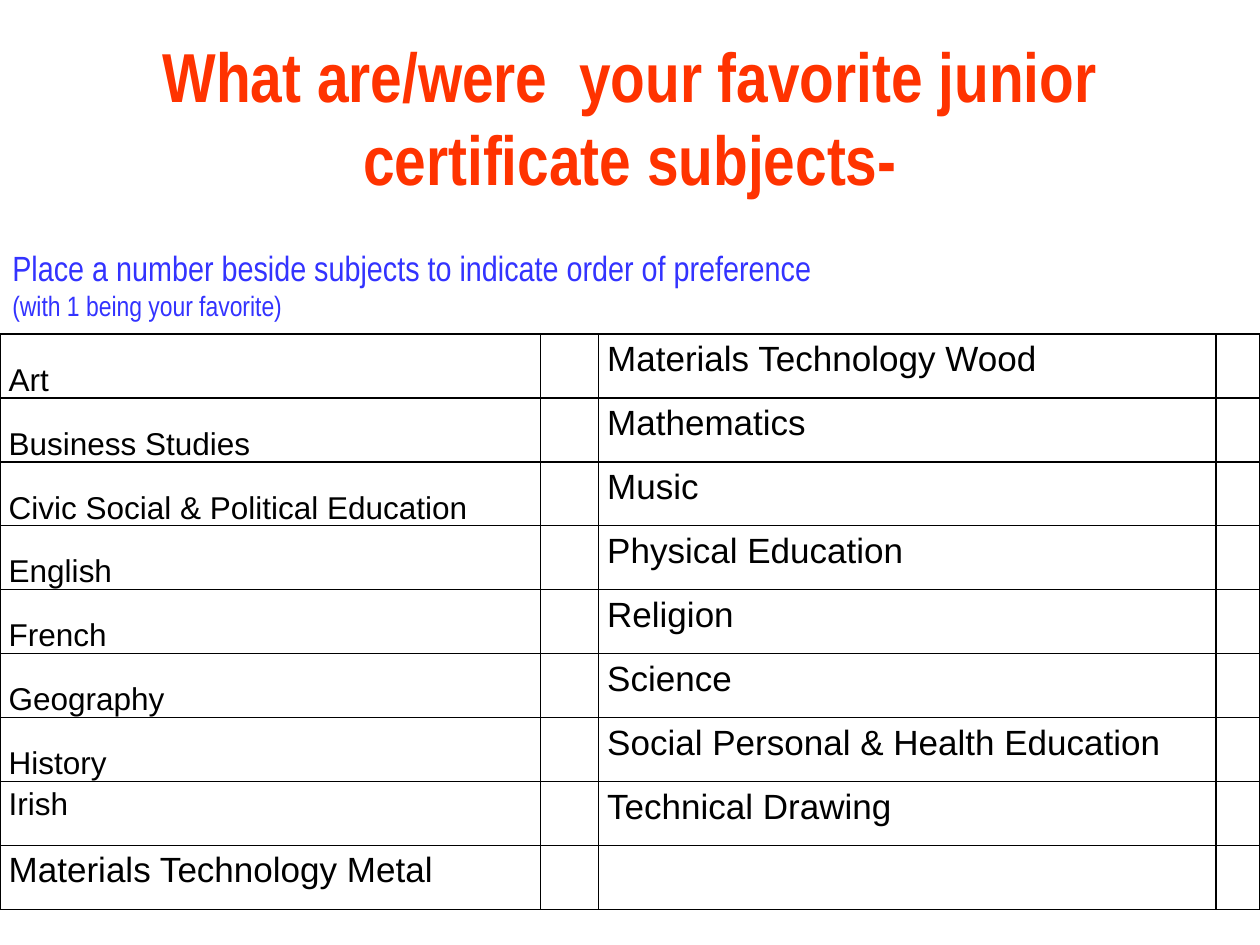
from typing import NamedTuple, Optional

from lxml.etree import SubElement
from pptx import Presentation
from pptx.dml.color import RGBColor
from pptx.enum.text import MSO_ANCHOR, PP_ALIGN
from pptx.oxml.ns import qn
from pptx.util import Pt

RED = RGBColor(0xFF, 0x33, 0x00)
BLUE = RGBColor(0x33, 0x33, 0xFF)
BLACK = RGBColor(0x00, 0x00, 0x00)

COLUMN_WIDTHS = (308.88, 33.12, 352.8, 25.2)
ROW_HEIGHT = 36.56


class Subject(NamedTuple):
    name: str
    size: float = 20
    anchor: MSO_ANCHOR = MSO_ANCHOR.TOP


LEFT_SUBJECTS = [
    Subject(name, 18, MSO_ANCHOR.BOTTOM)
    for name in (
        "Art",
        "Business Studies",
        "Civic Social & Political Education",
        "English",
        "French",
        "Geography",
        "History",
    )
] + [Subject("Irish", 18), Subject("Materials Technology Metal")]

RIGHT_SUBJECTS = [
    Subject(name)
    for name in (
        "Materials Technology Wood",
        "Mathematics",
        "Music",
        "Physical Education",
        "Religion",
        "Science",
        "Social Personal & Health Education",
        "Technical Drawing",
    )
]


def write(p, text: str, *, size: float, color: RGBColor, font: str = "Arial",
          bold: bool = False, align: PP_ALIGN = PP_ALIGN.LEFT,
          spacing: Optional[float] = None, after: float = 0) -> None:
    p.alignment = align
    p.space_before = Pt(0)
    p.space_after = Pt(after)
    if spacing:
        p.line_spacing = spacing
    r = p.add_run()
    r.text = text
    r.font.name = font
    r.font.size = Pt(size)
    r.font.bold = bold
    r.font.color.rgb = color


def add_borders(cell) -> None:
    tc_pr = cell._tc.get_or_add_tcPr()
    for i, side in enumerate(("lnL", "lnR", "lnT", "lnB")):
        ln = SubElement(tc_pr, qn(f"a:{side}"), w=str(Pt(1)))
        fill = SubElement(ln, qn("a:solidFill"))
        SubElement(fill, qn("a:srgbClr"), val=str(BLACK))
        tc_pr.remove(ln)
        tc_pr.insert(i, ln)


def fill_cell(cell, subject: Subject, after: float) -> None:
    cell.margin_left = cell.margin_right = Pt(5)
    cell.margin_top = cell.margin_bottom = Pt(0)
    cell.vertical_anchor = subject.anchor
    write(cell.text_frame.paragraphs[0], subject.name, size=subject.size,
          color=BLACK, spacing=1.15, after=after)


def add_title(s) -> None:
    sp = s.shapes.title
    sp.left, sp.top, sp.width, sp.height = Pt(36), Pt(21.6), Pt(648), Pt(90)
    tf = sp.text_frame
    tf.word_wrap = True
    tf.vertical_anchor = MSO_ANCHOR.MIDDLE
    write(tf.paragraphs[0], "What are/were  your favorite junior certificate subjects-",
          size=39.6, color=RED, font="Arial Narrow", bold=True, align=PP_ALIGN.CENTER)


def add_subject_table(s) -> None:
    rows = len(LEFT_SUBJECTS)
    table = s.shapes.add_table(rows, len(COLUMN_WIDTHS), Pt(0), Pt(190.8),
                               Pt(sum(COLUMN_WIDTHS)), Pt(rows * ROW_HEIGHT)).table
    table.first_row = table.horz_banding = False
    for column, width in zip(table.columns, COLUMN_WIDTHS):
        column.width = Pt(width)
    for row in table.rows:
        row.height = Pt(ROW_HEIGHT)
    for cell in table.iter_cells():
        cell.fill.background()
        add_borders(cell)
    for column, subjects, after in ((0, LEFT_SUBJECTS, 10), (2, RIGHT_SUBJECTS, 0)):
        for row, subject in enumerate(subjects):
            fill_cell(table.cell(row, column), subject, after)


def add_instructions(s) -> None:
    tf = s.shapes.add_textbox(Pt(0), Pt(136.8), Pt(720), Pt(51.1)).text_frame
    tf.word_wrap = True
    tf.vertical_anchor = MSO_ANCHOR.MIDDLE
    write(tf.paragraphs[0], "Place a number beside subjects to indicate order of preference",
          size=20, color=BLUE, font="Arial Narrow")
    write(tf.add_paragraph(), "(with 1 being your favorite)",
          size=16, color=BLUE, font="Arial Narrow")


def main() -> None:
    prs = Presentation()
    prs.slide_width, prs.slide_height = Pt(720), Pt(540)
    s = prs.slides.add_slide(prs.slide_layouts[5])
    add_title(s)
    add_subject_table(s)
    add_instructions(s)
    prs.save("out.pptx")


if __name__ == "__main__":
    main()
